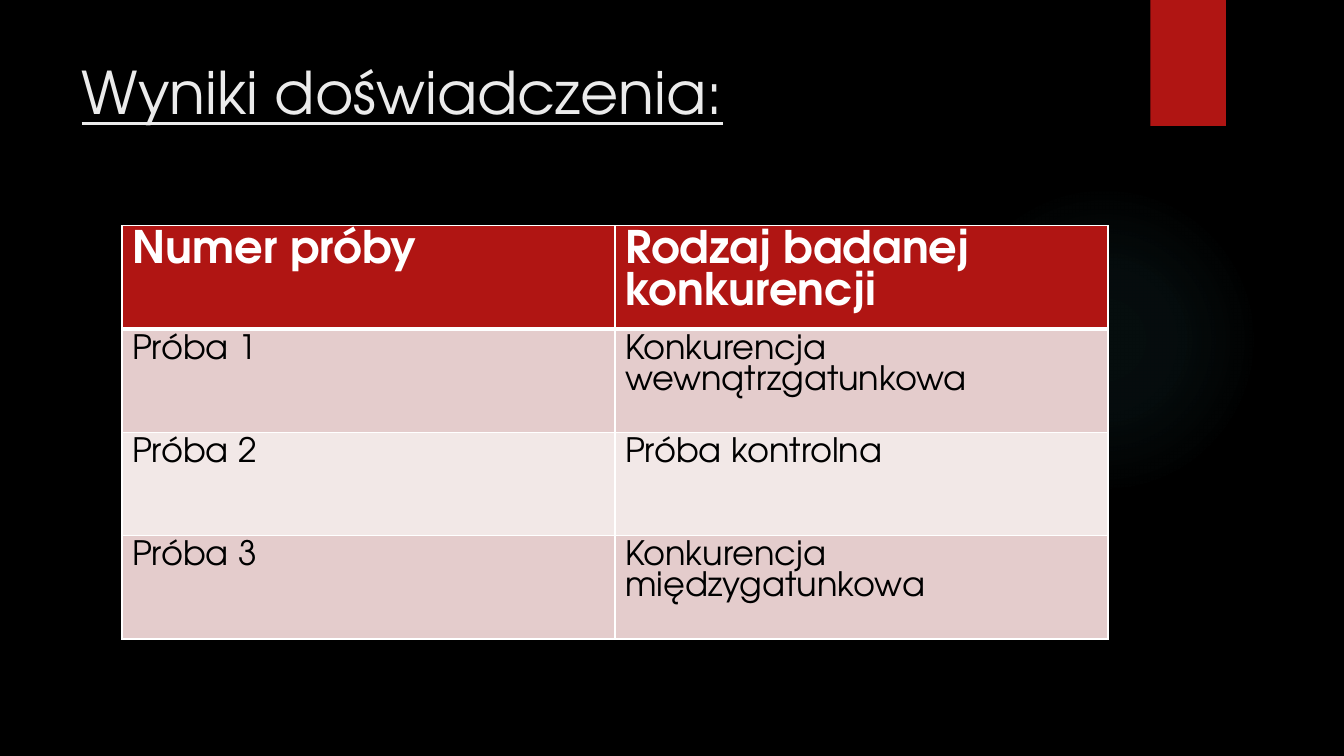
from pptx import Presentation
from pptx.dml.color import RGBColor
from pptx.enum.shapes import MSO_SHAPE
from pptx.enum.text import MSO_ANCHOR, MSO_AUTO_SIZE, PP_ALIGN
from pptx.oxml import parse_xml
from pptx.oxml.ns import nsdecls
from pptx.util import Inches, Pt

OVAL, RECT = MSO_SHAPE.OVAL, MSO_SHAPE.RECTANGLE
TOP, NO_FIT, LEFT = MSO_ANCHOR.TOP, MSO_AUTO_SIZE.NONE, PP_ALIGN.LEFT
FONT = "TeX Gyre Adventor"
RED = "B01513"


def color(value):
    return RGBColor.from_string(value)


def write(tf, text, fmt, hex_color):
    p = tf.paragraphs[0]
    p.alignment = LEFT
    r = p.add_run()
    r.text = text
    for name, value in fmt.items():
        setattr(r.font, name, value)
    r.font.color.rgb = color(hex_color)


prs = Presentation()
prs.slide_width, prs.slide_height = Inches(13.33), Inches(7.5)
s = prs.slides.add_slide(prs.slide_layouts[5])
s.background.fill.solid()
s.background.fill.fore_color.rgb = color("000000")

glow = s.shapes.add_shape(OVAL, Inches(9.41), Inches(1.83), Inches(3.08), Inches(3.08))
glow.shadow.inherit = False
glow.line.fill.background()
stops = "".join(
    f'<a:gs pos="{pos * 1000}"><a:srgbClr val="50B9C1"><a:alpha val="{alpha * 1000}"/></a:srgbClr></a:gs>'
    for pos, alpha in [(0, 7), (36, 6), (69, 0), (100, 0)]
)
glow.element.spPr.prstGeom.addnext(parse_xml(
    f'<a:gradFill {nsdecls("a")}><a:gsLst>{stops}</a:gsLst><a:path path="circle">'
    '<a:fillToRect l="50000" t="50000" r="50000" b="50000"/></a:path></a:gradFill>'
))

ribbon = s.shapes.add_shape(RECT, Inches(11.41), 0, Inches(0.75), Inches(1.25))
ribbon.shadow.inherit = False
ribbon.fill.solid()
ribbon.fill.fore_color.rgb = color(RED)
ribbon.line.fill.background()
ribbon.element.spPr.effectLst.append(parse_xml(
    f'<a:outerShdw {nsdecls("a")} blurRad="{Pt(3)}" dist="{Pt(2)}" dir="5400000">'
    '<a:srgbClr val="000000"><a:alpha val="45000"/></a:srgbClr></a:outerShdw>'
))

title = s.shapes.title
title.left, title.top = Inches(0.71), Inches(0.5)
title.width, title.height = Inches(10.29), Inches(1.53)
tf = title.text_frame
tf.word_wrap, tf.auto_size, tf.vertical_anchor = True, NO_FIT, TOP
write(tf, "Wyniki doświadczenia:", {"name": FONT, "size": Pt(42), "underline": True}, "EBEBEB")

rows = [
    ("Numer próby", "Rodzaj badanej konkurencji"),
    ("Próba 1", "Konkurencja wewnątrzgatunkowa"),
    ("Próba 2", "Próba kontrolna"),
    ("Próba 3", "Konkurencja międzygatunkowa"),
]
fills = [RED, "E4CCCC", "F2E8E7", "E4CCCC"]
header = {"name": FONT, "size": Pt(32), "bold": True}
body = {"name": FONT, "size": Pt(24), "bold": False}

table = s.shapes.add_table(
    len(rows), 2, Inches(1.21), Inches(2.24), Inches(9.78), Inches(4.1)
).table
for i, row in enumerate(rows):
    fmt, text_color = (header, "FFFFFF") if i == 0 else (body, "000000")
    borders = {"L": 1, "R": 1, "T": 3 if i == 1 else 1, "B": 3 if i == 0 else 1}
    for j, text in enumerate(row):
        cell = table.cell(i, j)
        write(cell.text_frame, text, fmt, text_color)
        tcPr = cell._tc.get_or_add_tcPr()
        for side, width in borders.items():
            tcPr.append(parse_xml(
                f'<a:ln{side} {nsdecls("a")} w="{Pt(width)}"><a:solidFill>'
                f'<a:srgbClr val="FFFFFF"/></a:solidFill></a:ln{side}>'
            ))
        cell.fill.solid()
        cell.fill.fore_color.rgb = color(fills[i])

prs.save("out.pptx")
